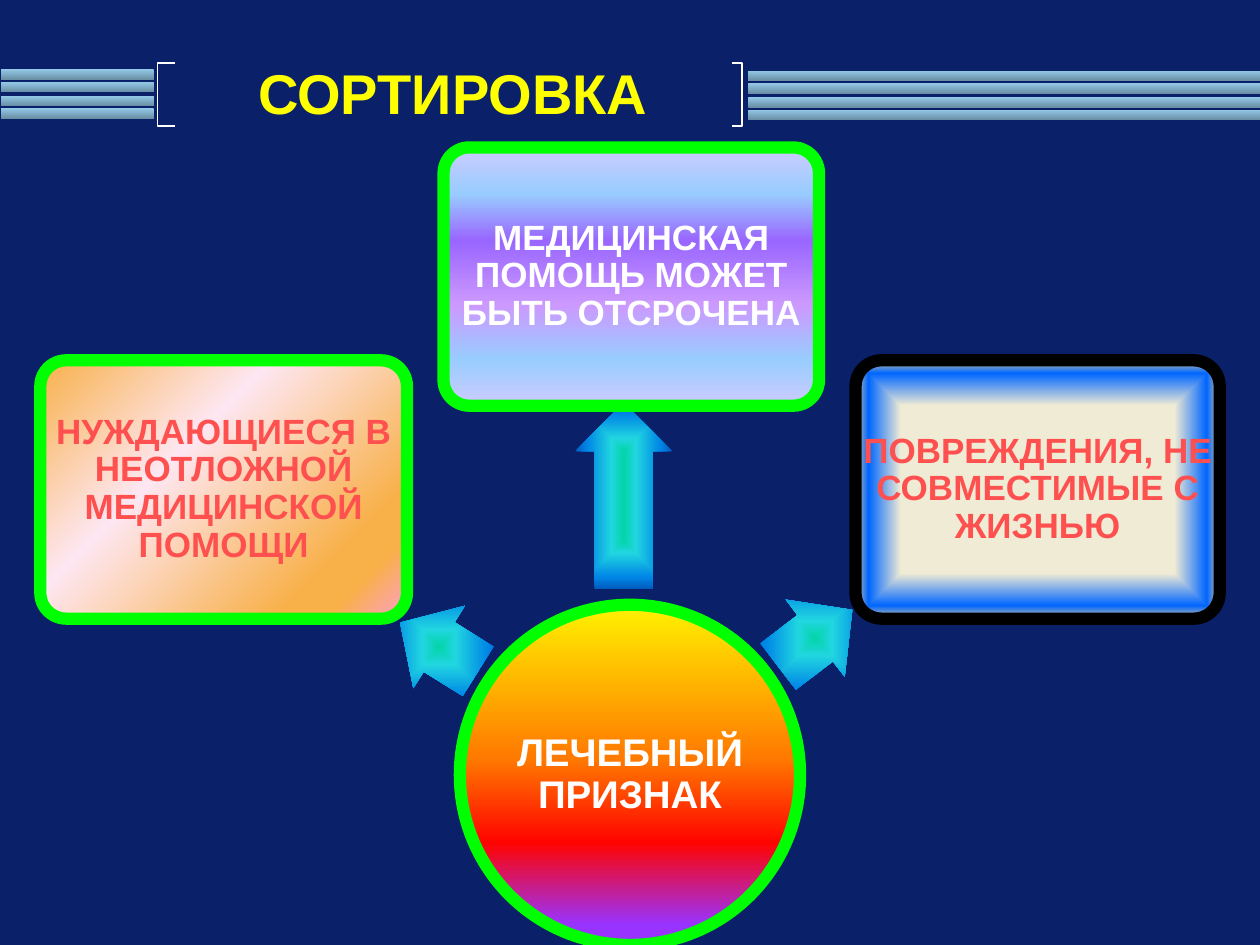
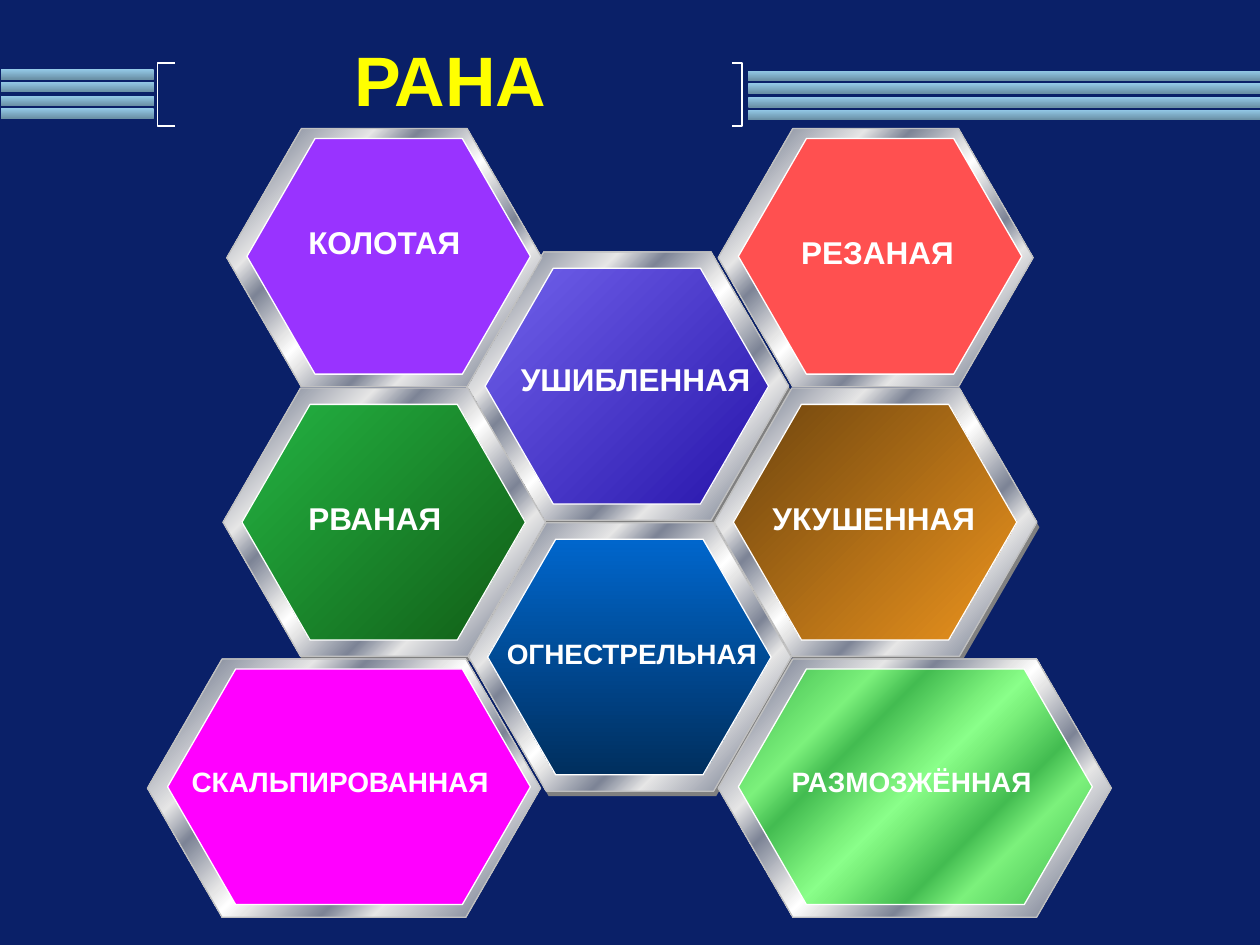
from lxml import etree
from pptx import Presentation
from pptx.dml.color import RGBColor
from pptx.enum.shapes import MSO_SHAPE
from pptx.enum.text import MSO_ANCHOR, PP_ALIGN
from pptx.oxml.ns import qn
from pptx.util import Emu, Pt

PX = 9144
FONT = "Arial"
RECT, ROUNDED, ELLIPSE = MSO_SHAPE.RECTANGLE, MSO_SHAPE.ROUNDED_RECTANGLE, MSO_SHAPE.OVAL
HEXAGON, ARROW = MSO_SHAPE.HEXAGON, MSO_SHAPE.LEFT_ARROW
TOP, MIDDLE, CENTER = MSO_ANCHOR.TOP, MSO_ANCHOR.MIDDLE, PP_ALIGN.CENTER

NAVY = RGBColor(0x0A, 0x20, 0x68)
WHITE = RGBColor(0xFF, 0xFF, 0xFF)
BLACK = RGBColor(0x00, 0x00, 0x00)
YELLOW = RGBColor(0xFF, 0xFF, 0x00)
LIME = RGBColor(0x00, 0xFF, 0x00)
CORAL = RGBColor(0xFF, 0x50, 0x50)
VIOLET = RGBColor(0x99, 0x33, 0xFF)
MAGENTA = RGBColor(0xFF, 0x00, 0xFF)
GRAY = RGBColor(0x80, 0x80, 0x80)
SILVER = RGBColor(0xC0, 0xC0, 0xC0)
PALE_STEEL = RGBColor(0xE6, 0xE6, 0xE6)
DARK_STEEL = RGBColor(0x7D, 0x84, 0x96)
BAND_LIGHT = RGBColor(0x94, 0xCA, 0xE8)
BAND_DARK = RGBColor(0x6A, 0x90, 0xA6)
SUN = RGBColor(0xFF, 0xF2, 0x00)
ORANGE = RGBColor(0xFF, 0x7A, 0x00)
RED = RGBColor(0xFF, 0x03, 0x00)
TEAL = RGBColor(0x03, 0xD4, 0xA8)
CYAN = RGBColor(0x21, 0xD6, 0xE0)
AZURE = RGBColor(0x00, 0x87, 0xE6)
COBALT = RGBColor(0x00, 0x5C, 0xBF)
PINK = RGBColor(0xFC, 0x9F, 0xCB)
APRICOT = RGBColor(0xF8, 0xB0, 0x49)
BLUSH = RGBColor(0xFE, 0xE7, 0xF2)
PERIWINKLE = RGBColor(0xCC, 0xCC, 0xFF)
SKY = RGBColor(0x99, 0xCC, 0xFF)
PURPLE = RGBColor(0x99, 0x66, 0xFF)
LILAC = RGBColor(0xCC, 0x99, 0xFF)
CREAM = RGBColor(0xF0, 0xEB, 0xD5)
BLUE = RGBColor(0x00, 0x66, 0xFF)
SAND = RGBColor(0xD1, 0xC3, 0x9F)
INDIGO_LIGHT = RGBColor(0x72, 0x62, 0xEC)
INDIGO_DARK = RGBColor(0x26, 0x14, 0xAA)
GREEN_LIGHT = RGBColor(0x24, 0xB4, 0x43)
GREEN_DARK = RGBColor(0x11, 0x5D, 0x16)
BROWN = RGBColor(0x6D, 0x44, 0x0E)
AMBER = RGBColor(0xEC, 0x94, 0x1E)
OCEAN_LIGHT = RGBColor(0x00, 0x66, 0xCC)
OCEAN_DARK = RGBColor(0x00, 0x2F, 0x5E)


def gradient(*stops, angle=90, path=None, focus=(50, 50, 50, 50)):
    """Describe a linear gradient, or a path gradient around a focus."""
    return {"stops": stops, "angle": angle, "path": path, "focus": focus}


BAND = gradient((0, BAND_LIGHT), (100, BAND_DARK))
METAL = gradient(
    (0, PALE_STEEL), (8, DARK_STEEL), (26, PALE_STEEL), (34, DARK_STEEL),
    (46, PALE_STEEL), (50, WHITE), (54, PALE_STEEL), (66, DARK_STEEL),
    (74, PALE_STEEL), (92, DARK_STEEL), (100, PALE_STEEL), angle=45)
FIRE = gradient((0, SUN), (45, ORANGE), (70, RED), (94, VIOLET))
WATER = gradient((0, TEAL), (25, CYAN), (75, AZURE), (100, COBALT), path="shape")
PEACH = gradient((0, PINK), (13, APRICOT), (21, APRICOT), (63, BLUSH), (100, APRICOT),
                 path="circle", focus=(100, 100, 0, 0))
DUSK = gradient((0, PERIWINKLE), (18, SKY), (36, PURPLE), (61, LILAC), (82, SKY),
                (100, PERIWINKLE))
FRAMED = gradient((65, CREAM), (90, BLUE), (100, SAND), path="rect")

BRANCHES = [
    ("НУЖДАЮЩИЕСЯ В НЕОТЛОЖНОЙ МЕДИЦИНСКОЙ ПОМОЩИ", (32, 286, 291, 205),
     PEACH, LIME, CORAL, (312, 475, 73, 77), 32),
    ("МЕДИЦИНСКАЯ ПОМОЩЬ МОЖЕТ БЫТЬ ОТСРОЧЕНА", (352, 117, 298, 205),
     DUSK, LIME, WHITE, (421, 355, 148, 77), 90),
    ("ПОВРЕЖДЕНИЯ, НЕ СОВМЕСТИМЫЕ С ЖИЗНЬЮ", (679, 286, 289, 205),
     FRAMED, BLACK, CORAL, (610, 468, 74, 77), 142.6),
]
RAISED_CELLS = [
    ("УШИБЛЕННАЯ", (370, 200), gradient((0, INDIGO_LIGHT), (100, INDIGO_DARK), angle=45),
     (21, 81, 227), 18),
    ("РВАНАЯ", (177, 308), gradient((0, GREEN_LIGHT), (100, GREEN_DARK), angle=45),
     (57, 83, 127), 18),
    ("УКУШЕННАЯ", (567, 308), gradient((0, BROWN), (100, AMBER), angle=45),
     (35, 83, 183), 18),
    ("ОГНЕСТРЕЛЬНАЯ", (372, 415), gradient((0, OCEAN_LIGHT), (100, OCEAN_DARK)),
     (19, 85, 221), 16),
]
FLAT_CELLS = [
    ("РАЗМОЗЖЁННАЯ", (570, 523, 312), 281, LIME, 46, (47, 79, 213), 16),
    ("СКАЛЬПИРОВАННАЯ", (117, 523, 312), 288, MAGENTA, 100, (24, 79, 258), 16),
    ("РЕЗАНАЯ", (570, 102, 250), 225, CORAL, 100, (55, 78, 143), 18),
    ("КОЛОТАЯ", (180, 102, 250), 225, VIOLET, 100, (54, 70, 142), 18),
]


def scaled(box):
    """Turn a box in px into EMU."""
    return [Emu(length * PX) for length in box]


def fill_gradient(shape, paint):
    """Fill a shape with a described gradient."""
    shape.fill.gradient()
    grad = shape._element.spPr.find(qn("a:gradFill"))
    grad.clear()
    grad.set("rotWithShape", "1")
    stop_list = etree.SubElement(grad, qn("a:gsLst"))
    for position, color in paint["stops"]:
        stop = etree.SubElement(stop_list, qn("a:gs"), pos=str(position * 1000))
        etree.SubElement(stop, qn("a:srgbClr"), val=str(color))
    if paint["path"]:
        path = etree.SubElement(grad, qn("a:path"), path=paint["path"])
        sides = {side: str(value * 1000) for side, value in zip("ltrb", paint["focus"])}
        etree.SubElement(path, qn("a:fillToRect"), **sides)
    else:
        etree.SubElement(grad, qn("a:lin"), ang=str(paint["angle"] * 60000), scaled="1")


def add_figure(page, kind, box, paint, line=None, width=0.75, adjust=(), turn=0, opacity=100):
    """Add a preset shape with a solid or gradient fill."""
    shape = page.shapes.add_shape(kind, *scaled(box))
    shape.shadow.inherit = False
    shape.rotation = turn
    for index, value in enumerate(adjust):
        shape.adjustments[index] = value
    if isinstance(paint, RGBColor):
        shape.fill.solid()
        shape.fill.fore_color.rgb = paint
        if opacity < 100:
            color = shape._element.spPr.find(qn("a:solidFill")).find(qn("a:srgbClr"))
            etree.SubElement(color, qn("a:alpha"), val=str(opacity * 1000))
    else:
        fill_gradient(shape, paint)
    if line is None:
        shape.line.fill.background()
    else:
        shape.line.color.rgb = line
        shape.line.width = Pt(width)
    return shape


def add_text(page, box, text, size=18, color=WHITE, anchor=MIDDLE, wrap=True,
             spacing=1.0, inset=None):
    """Add a centred bold text box."""
    frame = page.shapes.add_textbox(*scaled(box)).text_frame
    frame.word_wrap = wrap
    frame.vertical_anchor = anchor
    if inset is not None:
        frame.margin_left = frame.margin_right = Emu(inset * PX)
        frame.margin_top = frame.margin_bottom = Emu(inset * PX)
    para = frame.paragraphs[0]
    para.alignment = CENTER
    para.line_spacing = spacing
    span = para.add_run()
    span.text = text
    span.font.name, span.font.size, span.font.bold = FONT, Pt(size), True
    span.font.color.rgb = color


def draw_bracket(page, open_x, spine_x, top, height):
    """Draw a square bracket that opens away from its spine."""
    points = [(spine_x, top), (spine_x, top + height), (open_x, top + height)]
    builder = page.shapes.build_freeform(open_x * PX, top * PX)
    builder.add_line_segments([(x * PX, y * PX) for x, y in points], close=False)
    bracket = builder.convert_to_shape()
    bracket.shadow.inherit = False
    bracket.fill.background()
    bracket.line.color.rgb = WHITE
    bracket.line.width = Pt(0.75)


def draw_bands(page, left, top, width):
    """Draw four evenly spaced stripes."""
    for row in range(4):
        add_figure(page, RECT, (left, top + round(row * 10.4), width, 8), BAND)


def draw_header(page, title, box, size):
    """Draw the stripes, brackets and title shared by the slides."""
    draw_bands(page, 1, 55, 121)
    draw_bracket(page, 139, 125, 50, 50)
    draw_bands(page, 594, 56, 406)
    draw_bracket(page, 581, 589, 50, 50)
    add_text(page, box, title, size=size, color=YELLOW)


def draw_branch(page, text, box, paint, line, color, arrow_box, turn):
    """Draw an arrow and the framed category it leads to."""
    add_figure(page, ARROW, arrow_box, WATER, adjust=(0.6, 0.5), turn=turn)
    add_figure(page, ROUNDED, box, paint, line=line, width=7, adjust=(0.1,))
    add_text(page, box, text, size=20, color=color, spacing=0.9, inset=4)


def draw_cell(page, text, frame_box, face_box, paint, label, size, opacity=100):
    """Draw a metal hexagon with a face and label placed relative to it."""
    left, top = frame_box[:2]
    dx, dy, width, height = face_box
    add_figure(page, HEXAGON, frame_box, METAL, line=SILVER, adjust=(0.289,))
    add_figure(page, HEXAGON, (left + dx, top + dy, width, height), paint, line=WHITE,
               adjust=(0.289,), opacity=opacity)
    dx, dy, width = label
    add_text(page, (left + dx, top + dy, width, 40), text, size=size, anchor=TOP, wrap=False)


def build_triage(page):
    """Build the triage slide: a circle with three branches."""
    circle = (365, 480, 270, 270)
    add_figure(page, ELLIPSE, circle, FIRE, line=LIME, width=7)
    add_text(page, circle, "ЛЕЧЕБНЫЙ ПРИЗНАК", size=22, spacing=0.9, inset=2)
    for branch in BRANCHES:
        draw_branch(page, *branch)
    draw_header(page, "СОРТИРОВКА", (125, 42, 469, 62), 32)


def build_wounds(page):
    """Build the wound slide: a honeycomb of wound types."""
    draw_header(page, "РАНА", (141, 31, 433, 62), 40)
    for text, (left, top), paint, label, size in RAISED_CELLS:
        add_figure(page, HEXAGON, (left + 2, top + 4, 256, 213), GRAY, adjust=(0.289,))
        draw_cell(page, text, (left, top, 256, 213), (15, 13, 225, 187), paint, label, size)
    for text, (left, top, width), face_width, paint, opacity, label, size in FLAT_CELLS:
        draw_cell(page, text, (left, top, width, 205), (16, 8, face_width, 187), paint,
                  label, size, opacity)


def main():
    """Build and save the deck."""
    deck = Presentation()
    deck.slide_width, deck.slide_height = scaled((1000, 750))
    background = deck.slide_master.background.fill
    background.solid()
    background.fore_color.rgb = NAVY
    for build in (build_triage, build_wounds):
        build(deck.slides.add_slide(deck.slide_layouts[6]))
    deck.save("out.pptx")


if __name__ == "__main__":
    main()
